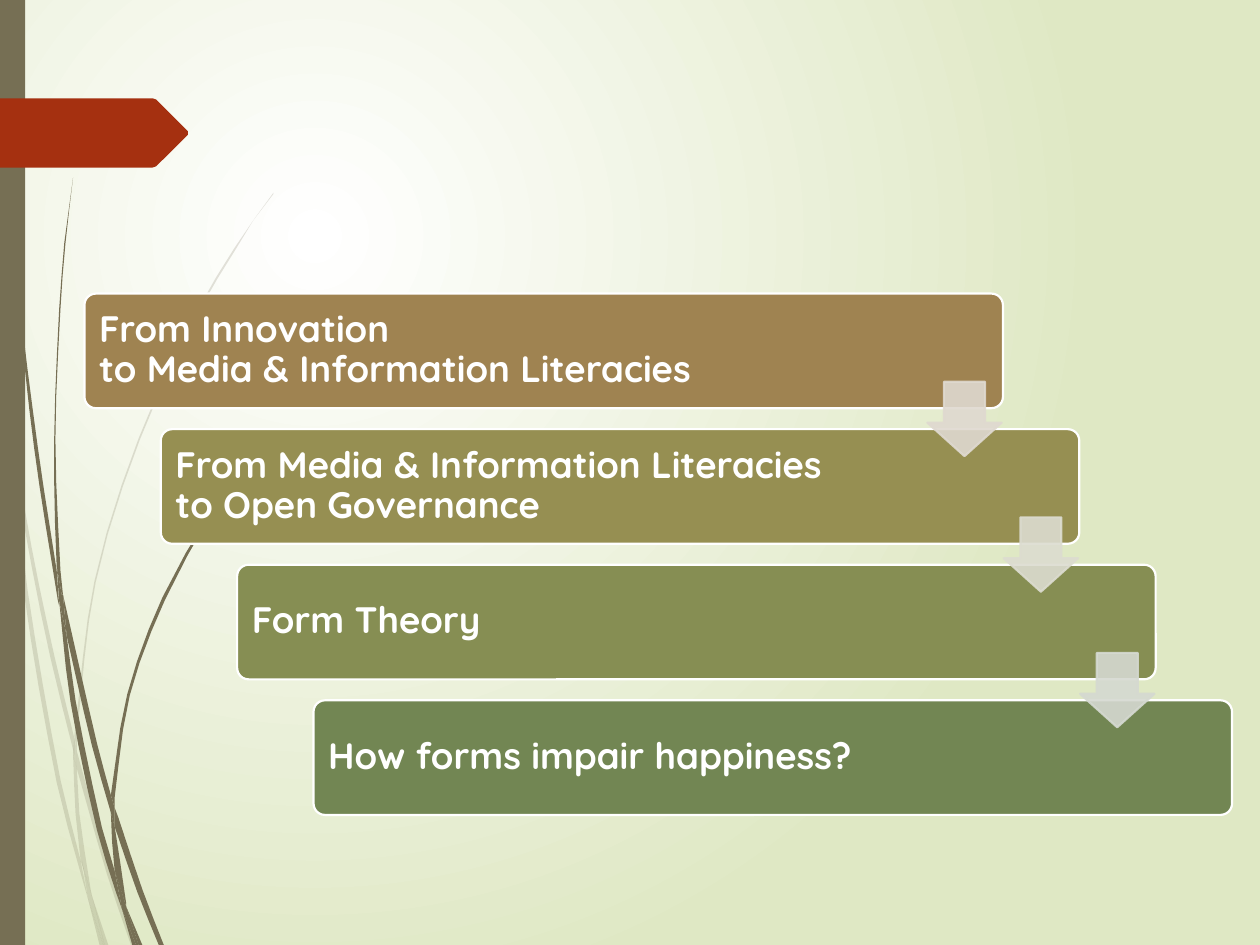
from math import ceil, dist

from lxml import etree
from pptx import Presentation
from pptx.dml.color import RGBColor
from pptx.enum.shapes import MSO_SHAPE
from pptx.enum.text import MSO_ANCHOR, PP_ALIGN
from pptx.oxml.ns import qn
from pptx.util import Inches, Pt

WHITE = RGBColor(0xFF, 0xFF, 0xFF)
PALE_GREEN = RGBColor(0xDF, 0xE8, 0xC4)
OLIVE = RGBColor(0x76, 0x6F, 0x54)
RED = RGBColor(0xA5, 0x30, 0x10)

# Each piece of grass is a left edge and a right edge, in inches
PALE_GRASS = [
    ([(0.1, 3.45), (0.25, 4.34), (0.43, 5.2), (0.59, 5.86)],
     [(0.59, 5.99), (0.4, 5.22), (0.25, 4.49), (0.12, 3.76)]),
    ([(0.61, 5.96), (0.64, 6.07), (0.88, 6.92), (1.08, 7.5)],
     [(1.04, 7.5), (0.85, 6.94), (0.61, 6.1)]),
    ([(0.73, 7.11), (0.86, 7.5)], [(0.83, 7.5)]),
    ([(0.08, 3.5), (0.12, 3.76), (0.22, 4.69), (0.48, 6.19), (0.64, 6.83), (0.7, 7.14)],
     [(0.64, 6.93), (0.45, 6.21), (0.19, 4.7), (0.08, 3.5)]),
    ([(0.58, 5.99), (0.6, 6.46), (0.64, 6.83), (0.73, 7.11)],
     [(0.72, 7.06), (0.63, 6.46), (0.61, 6.1)]),
    ([(0.61, 5.96), (0.61, 5.84), (0.76, 4.62), (1.11, 3.49), (1.59, 2.45),
      (1.87, 1.98), (2.01, 1.75), (2.17, 1.54)],
     [(2.17, 1.53), (2.01, 1.75), (1.86, 1.97), (1.58, 2.44), (1.1, 3.48),
      (0.75, 4.61), (0.59, 5.84)]),
    ([(0.7, 7.14), (0.79, 7.5)], [(0.82, 7.5)]),
    ([(0.61, 6.1), (0.61, 5.96)], [(0.59, 5.86), (0.58, 5.99)]),
    ([(0.65, 6.83), (0.7, 7.14), (0.82, 7.5)], [(0.83, 7.5), (0.73, 7.11), (0.67, 6.92)]),
]
DARK_GRASS = [
    ([(0.03, 0), (0.04, 0.48), (0.06, 1.09), (0.15, 2.32), (0.3, 3.55), (0.45, 4.53)],
     [(0.47, 4.81), (0.46, 4.77), (0.27, 3.55), (0.14, 2.33), (0.05, 1.1),
      (0.03, 0.48), (0.02, 0)]),
    ([(0.5, 4.72), (0.77, 5.9), (0.88, 6.31)], [(0.88, 6.45), (0.73, 5.92), (0.53, 5.05)]),
    ([(0.91, 6.41), (0.94, 6.49), (1.13, 7.06), (1.3, 7.5)],
     [(1.26, 7.5), (1.09, 7.08), (0.91, 6.56)]),
    ([(0.47, 4.77), (0.53, 5.05), (0.6, 5.56), (0.81, 6.57), (0.91, 6.91), (0.97, 7.22)],
     [(0.92, 7.08), (0.77, 6.59), (0.56, 5.57), (0.47, 4.77)]),
    ([(0.5, 4.72), (0.48, 4.53), (0.44, 3.49), (0.48, 2.45), (0.52, 1.93), (0.58, 1.41)],
     [(0.51, 1.93), (0.47, 2.45), (0.43, 3.49), (0.45, 4.49), (0.49, 4.72)]),
    ([(1, 7.19), (1.13, 7.5)], [(1.1, 7.5)]),
    ([(0.45, 4.49), (0.49, 4.72)], [(0.5, 4.72), (0.53, 5.05), (0.47, 4.77)]),
    ([(0.91, 6.41), (0.91, 6.33), (1.03, 5.52), (1.31, 4.76), (1.69, 4.06),
      (1.91, 3.74), (2.16, 3.44)],
     [(2.15, 3.44), (1.91, 3.73), (1.68, 4.05), (1.29, 4.74), (1.01, 5.51), (0.88, 6.31)]),
    ([(0.97, 7.22), (1.08, 7.5)], [(1.05, 7.5)]),
    ([(0.88, 6.45), (0.91, 6.91), (1, 7.19)], [(1, 7.16), (0.91, 6.56), (0.88, 6.45)]),
    ([(0.88, 6.31), (0.91, 6.41)], [(0.91, 6.56), (0.88, 6.45)]),
    ([(0.91, 6.91), (0.97, 7.22), (1.08, 7.5)], [(1.1, 7.5), (1, 7.19), (0.96, 7.06)]),
]
STEPS = [
    ("From Innovation\vto Media & Information Literacies", RGBColor(0x9F, 0x83, 0x51)),
    ("From Media & Information Literacies\vto Open Governance", RGBColor(0x96, 0x8F, 0x52)),
    ("Form Theory", RGBColor(0x86, 0x8E, 0x53)),
    ("How forms impair happiness?", RGBColor(0x72, 0x86, 0x53)),
]
ARROW_COLORS = [RGBColor(0xDF, 0xD9, 0xD0), RGBColor(0xDC, 0xDC, 0xD0),
                RGBColor(0xD5, 0xD9, 0xD1)]
STEP_RIGHT, STEP_DOWN = 0.606, 1.076


def smooth(points):
    """Return points along a curve that passes through the given points."""
    last = len(points) - 1
    tangents = []
    for i in range(last + 1):
        before, after = points[max(i - 1, 0)], points[min(i + 1, last)]
        length = dist(before, after) or 1
        tangents.append([(b - a) / length for a, b in zip(before, after)])
    curve = [points[0]]
    for i in range(last):
        length = dist(points[i], points[i + 1])
        pieces = ceil(length / 0.4) if last > 1 else 1
        for k in range(1, pieces + 1):
            t = k / pieces
            weights = (2*t**3 - 3*t**2 + 1, 3*t**2 - 2*t**3,
                       (t**3 - 2*t**2 + t) * length, (t**3 - t**2) * length)
            controls = (points[i], points[i + 1], tangents[i], tangents[i + 1])
            curve.append(tuple(sum(w * c[axis] for w, c in zip(weights, controls))
                               for axis in (0, 1)))
    return curve


def paint(shape, color, line_color=None, opacity=100):
    shape.shadow.inherit = False
    shape.fill.solid()
    shape.fill.fore_color.rgb = color
    if line_color is None:
        shape.line.fill.background()
    else:
        shape.line.color.rgb = line_color
        shape.line.width = Pt(1.25)
    if opacity < 100:
        for color_element in shape.element.spPr.iter(qn("a:srgbClr")):
            etree.SubElement(color_element, qn("a:alpha"), val=str(opacity * 1000))


presentation = Presentation()
presentation.slide_width, presentation.slide_height = Inches(10), Inches(7.5)
slide = presentation.slides.add_slide(presentation.slide_layouts[6])
shapes = slide.shapes

# Round glow on the background
background_fill = slide.background.fill
background_fill.gradient()
for stop, color in zip(background_fill.gradient_stops, (WHITE, PALE_GREEN)):
    stop.color.rgb = color
gradient = slide.element.find(".//" + qn("a:gradFill"))
gradient.remove(gradient.find(qn("a:lin")))
glow = etree.SubElement(gradient, qn("a:path"), path="circle")
etree.SubElement(glow, qn("a:fillToRect"), l="50000", t="50000", r="100000", b="100000")

# Grass, side bar and red tag
for grass, opacity in ((PALE_GRASS, 20), (DARK_GRASS, 100)):
    for left_edge, right_edge in grass:
        outline = [(Inches(x), Inches(y)) for x, y in smooth(left_edge) + smooth(right_edge)]
        builder = shapes.build_freeform(*outline[0])
        builder.add_line_segments(outline[1:], close=True)
        paint(builder.convert_to_shape(), OLIVE, opacity=opacity)

side_bar = shapes.add_shape(MSO_SHAPE.RECTANGLE, 0, 0, Inches(0.2), Inches(7.5))
paint(side_bar, OLIVE)

builder = shapes.build_freeform(0, 78, scale=Inches(0.01))
builder.add_line_segments([(121, 78), (124, 79), (149, 104), (149, 107),
                           (124, 132), (121, 133), (0, 133)])
paint(builder.convert_to_shape(), RED)

# Staircase of steps
for i, (text, color) in enumerate(STEPS):
    step = shapes.add_shape(MSO_SHAPE.ROUNDED_RECTANGLE, Inches(0.67 + i * STEP_RIGHT),
                            Inches(2.33 + i * STEP_DOWN), Inches(7.29), Inches(0.91))
    step.adjustments[0] = 0.1
    paint(step, color, WHITE)
    frame = step.text_frame
    frame.word_wrap = True
    frame.vertical_anchor = MSO_ANCHOR.MIDDLE
    frame.margin_left = Inches(0.09)
    frame.text = text
    paragraph = frame.paragraphs[0]
    paragraph.alignment = PP_ALIGN.LEFT
    paragraph.line_spacing = 0.9
    paragraph.font.name = "Quicksand"
    paragraph.font.size = Pt(21)
    paragraph.font.bold = True
    paragraph.font.color.rgb = WHITE

for i, color in enumerate(ARROW_COLORS):
    arrow = shapes.add_shape(MSO_SHAPE.DOWN_ARROW, Inches(7.36 + i * STEP_RIGHT),
                             Inches(3.03 + i * STEP_DOWN), Inches(0.59), Inches(0.59))
    arrow.adjustments[0], arrow.adjustments[1] = 0.55, 0.45
    paint(arrow, color, color, opacity=90)

presentation.save("out.pptx")
